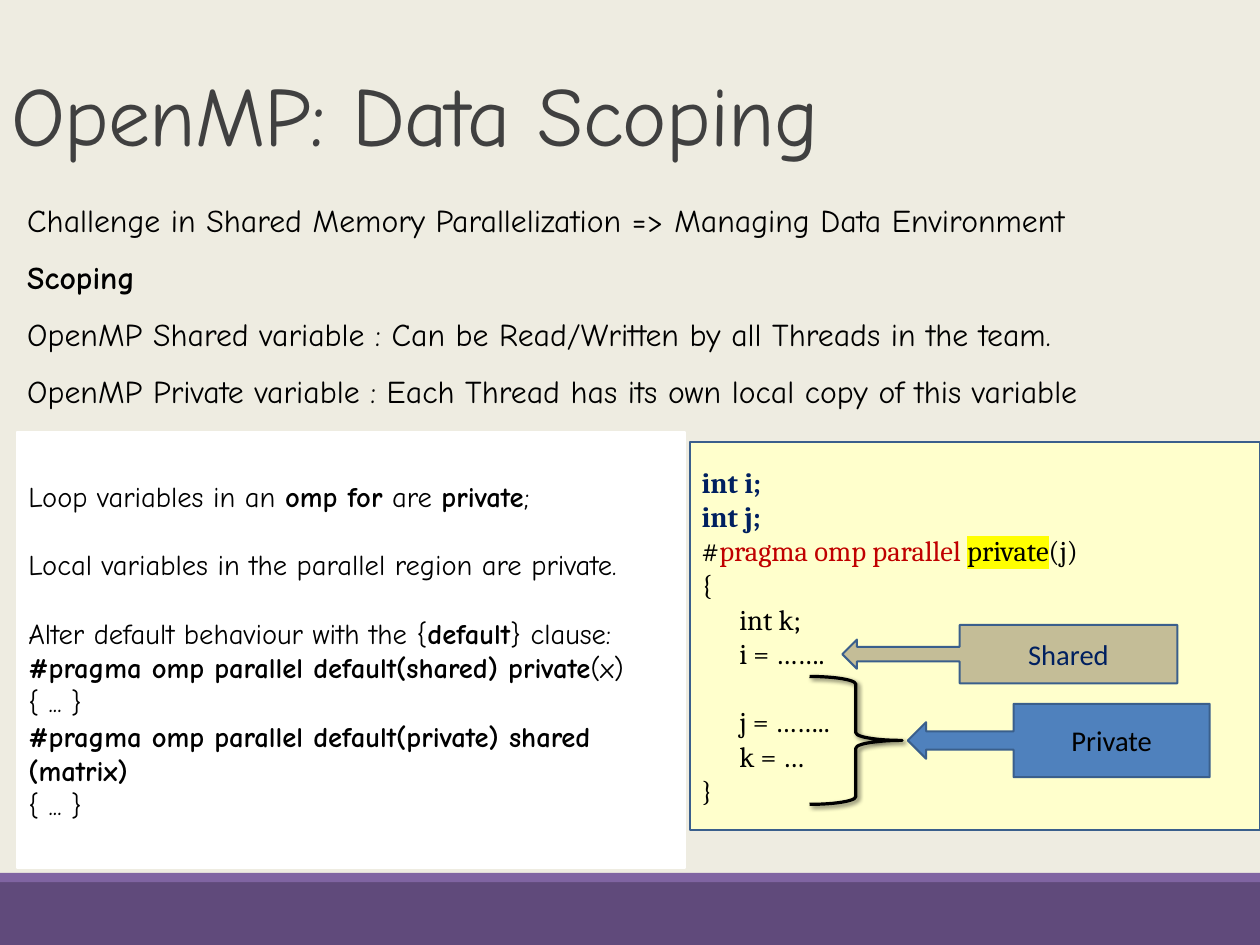
"""Build the OpenMP data scoping slide."""
from lxml.etree import SubElement
from pptx import Presentation
from pptx.dml.color import RGBColor
from pptx.enum.shapes import MSO_SHAPE as Shape
from pptx.enum.text import MSO_ANCHOR as Anchor, MSO_AUTO_SIZE as AutoSize, PP_ALIGN as Align
from pptx.oxml.ns import qn
from pptx.util import Cm, Inches, Pt

WIDTH, HEIGHT = Cm(28), Cm(21)
HAND, CODE, PLAIN = "Comic Neue", "Cambria", "Calibri"
BLACK, NAVY, RED, EDGE = "000000", "002060", "C00000", "3A5F8C"
BOLD = dict(bold=True)
DECLARATION = dict(bold=True, color=NAVY)
GAP = dict(before=21.5)
INDENT = dict(indent=0.33)

TITLE = "OpenMP: Data Scoping"
INTRO = [
    ({}, [("Challenge in Shared Memory Parallelization => Managing Data Environment", {})]),
    ({}, [("Scoping", BOLD)]),
    ({}, [("OpenMP Shared variable : Can be Read/Written by all Threads in the team.", {})]),
    ({}, [("OpenMP Private variable : Each Thread has its own local copy of this variable", {})]),
]
LISTING = [
    ({}, [("int i;", DECLARATION)]),
    ({}, [("int j;", DECLARATION)]),
    ({}, [("#", {}), ("pragma omp parallel ", dict(color=RED)),
          ("private", dict(highlight="FFFF00")), ("(j)", {})]),
    ({}, [("{", {})]),
    (INDENT, [("int k;", {})]),
    (INDENT, [("i = …….", {})]),
    (INDENT | GAP, [("j = ……..", {})]),
    (INDENT, [("k = …", {})]),
    ({}, [("}", {})]),
]
RULES = [
    ({}, [("Loop variables in an ", {}), ("omp for", BOLD), (" are ", {}),
          ("private", BOLD), (";", {})]),
    (GAP, [("Local variables in the parallel region are private.", {})]),
    (GAP, [("Alter default behaviour with the {", {}), ("default", BOLD), ("} clause:", {})]),
    ({}, [("#pragma omp parallel default(shared) private", BOLD), ("(x)", {})]),
    ({}, [("{ ... }", {})]),
    ({}, [("#pragma omp parallel default(private) shared (matrix)", BOLD)]),
    ({}, [("{ ... }", {})]),
]

# Places are left, top, width and height in percent of the slide.
BANDS = [((0, 93.35, 100, 6.65), "604A7B"), ((0, 92.38, 100, 0.97), "8064A2")]
TITLE_AT = (0, 3.02, 90.02, 14.87)
INTRO_AT = (1.27, 18.62, 95.55, 25.63)
PANELS = [
    ((54.79, 46.8, 45.19, 40.99), "FFFFCC", EDGE, CODE, LISTING),
    ((1.36, 45.71, 52.99, 46.19), "FFFFFF", "FFFFFF", HAND, RULES),
]
CALLOUTS = [
    ("Private", (72.05, 74.49, 23.96, 7.74), "4F81BD", BLACK),
    ("Shared", (66.85, 66.14, 26.59, 6.18), "C4BD97", NAVY),
]
BRACE_AT = (64.25, 71.58, 7.35, 13.54)


def rgb(value):
    """Turn a hex string into a colour."""
    return RGBColor.from_string(value)


def place(at):
    """Turn percentages of the slide into lengths."""
    return [int(share * side / 100) for share, side in zip(at, (WIDTH, HEIGHT) * 2)]


def add_text(p, text, size=18, font=HAND, color=BLACK, bold=False, highlight=None, spacing=None):
    """Add one formatted run to a paragraph."""
    r = p.add_run()
    r.text = text
    r.font.size, r.font.bold = Pt(size), bold
    r.font.color.rgb = rgb(color)
    r.font.name = font
    props = r.font._element
    if highlight:
        mark = SubElement(props, qn("a:highlight"))
        SubElement(mark, qn("a:srgbClr")).set("val", highlight)
        props.find(qn("a:solidFill")).addnext(mark)
    if spacing:
        props.set("spc", str(int(spacing * 100)))


def add_lines(tf, lines, line_spacing=1.0, **style):
    """Fill a text frame with left-aligned paragraphs."""
    tf.word_wrap = True
    for i, (layout, runs) in enumerate(lines):
        p = tf.add_paragraph() if i else tf.paragraphs[0]
        p.alignment, p.line_spacing = Align.LEFT, line_spacing
        p.space_before = Pt(layout.get("before", 0))
        if "indent" in layout:
            p._p.get_or_add_pPr().set("marL", str(Inches(layout["indent"])))
        for text, own in runs:
            add_text(p, text, **(style | own))


def add_box(s, kind, at, fill=None, line=None, weight=1.25):
    """Add a preset shape with its own fill and outline."""
    sp = s.shapes.add_shape(kind, *place(at))
    sp.shadow.inherit = False
    if fill:
        sp.fill.solid()
        sp.fill.fore_color.rgb = rgb(fill)
    else:
        sp.fill.background()
    if line:
        sp.line.color.rgb = rgb(line)
        sp.line.width = Pt(weight)
    else:
        sp.line.fill.background()
    sp.text_frame.vertical_anchor = Anchor.MIDDLE
    return sp


def add_shadow(sp):
    """Give a shape a soft diagonal shadow."""
    effects = sp._element.spPr.find(qn("a:effectLst"))
    shadow = SubElement(effects, qn("a:outerShdw"), blurRad=str(Pt(3)), dist=str(Pt(2)),
                        dir=str(45 * 60000), rotWithShape="0")
    color = SubElement(shadow, qn("a:srgbClr"), val=BLACK)
    SubElement(color, qn("a:alpha"), val="60000")


def main():
    """Compose and save the slide."""
    prs = Presentation()
    prs.slide_width, prs.slide_height = WIDTH, HEIGHT
    s = prs.slides.add_slide(prs.slide_layouts[5])
    s.background.fill.solid()
    s.background.fill.fore_color.rgb = rgb("EEECE1")

    for at, fill in BANDS:
        add_box(s, Shape.RECTANGLE, at, fill)

    title = s.shapes.title
    title.left, title.top, title.width, title.height = place(TITLE_AT)
    tf = title.text_frame
    tf.auto_size, tf.vertical_anchor = AutoSize.NONE, Anchor.BOTTOM
    add_lines(tf, [({}, [(TITLE, {})])], 0.85, size=52.9, color="404040", spacing=-0.5)

    intro = s.shapes.add_textbox(*place(INTRO_AT))
    add_lines(intro.text_frame, INTRO, 1.5, size=20)

    for at, fill, line, font, lines in PANELS:
        panel = add_box(s, Shape.RECTANGLE, at, fill, line)
        add_lines(panel.text_frame, lines, font=font)

    for label, at, fill, color in CALLOUTS:
        callout = add_box(s, Shape.LEFT_ARROW_CALLOUT, at, fill, EDGE)
        p = callout.text_frame.paragraphs[0]
        p.alignment = Align.CENTER
        add_text(p, label, font=PLAIN, color=color)

    add_shadow(add_box(s, Shape.RIGHT_BRACE, BRACE_AT, line=BLACK, weight=2))
    prs.save("out.pptx")


if __name__ == "__main__":
    main()
